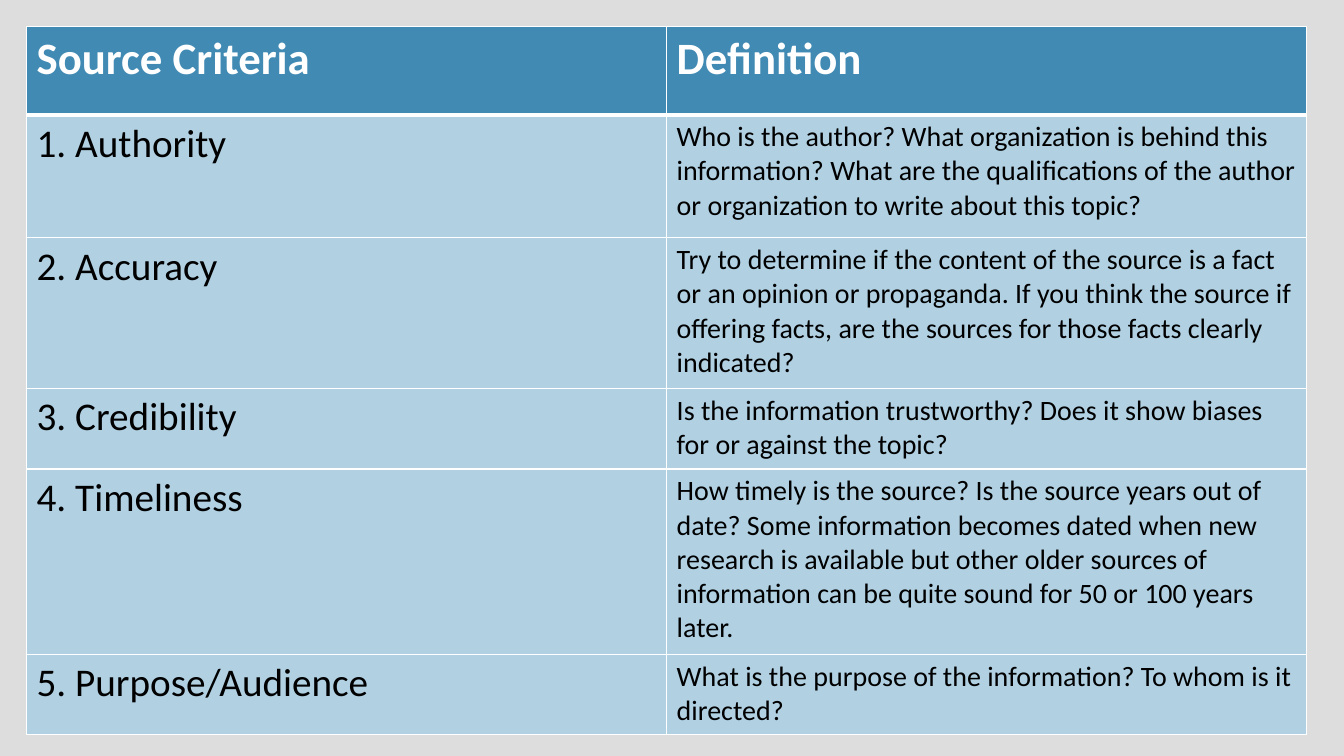
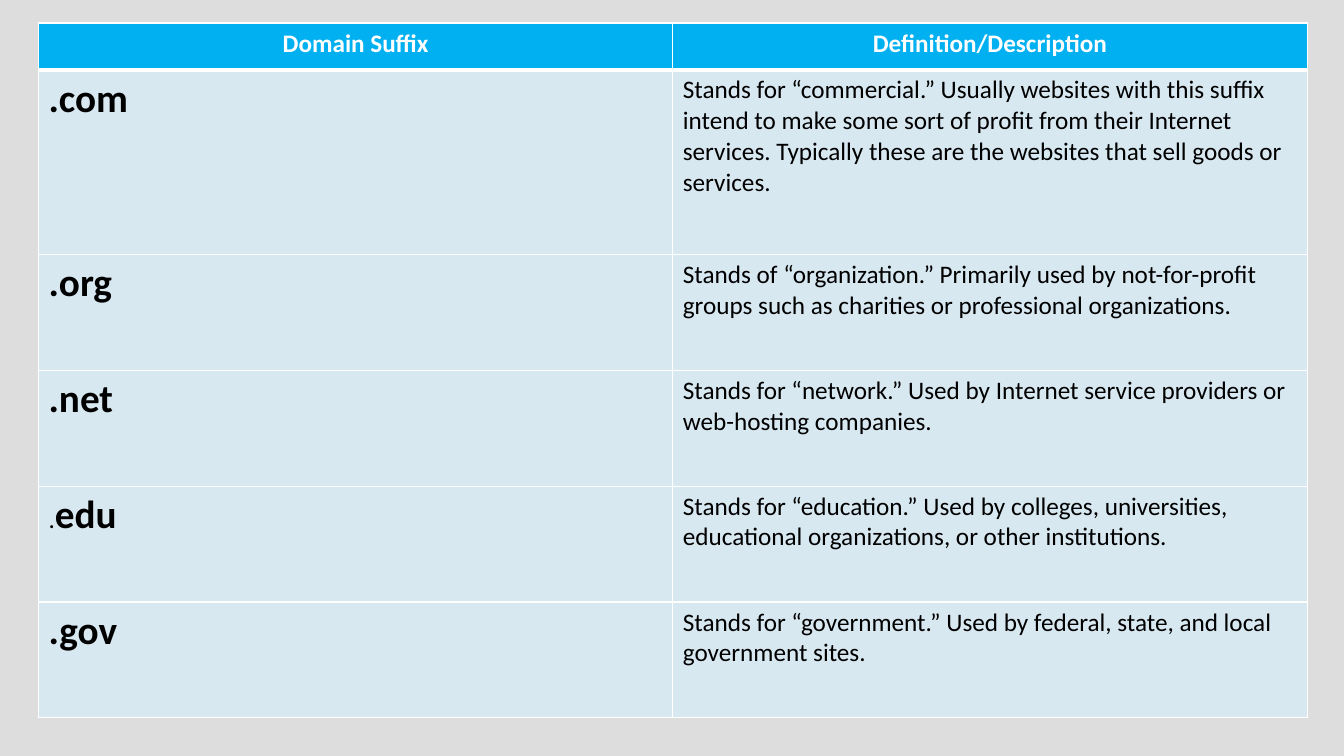
from lxml.etree import SubElement
from pptx import Presentation
from pptx.dml.color import RGBColor
from pptx.enum.text import PP_ALIGN
from pptx.oxml.ns import qn
from pptx.util import Cm, Pt

FONT = "Calibri"
WHITE = "FFFFFF"
BLACK = "000000"
GREY = "DDDDDD"
THIN = 1
THICK = 3

CRITERIA = [
    ("1. Authority",
     "Who is the author? What organization is behind this information? "
     "What are the qualifications of the author or organization to write "
     "about this topic?"),
    ("2. Accuracy",
     "Try to determine if the content of the source is a fact or an opinion "
     "or propaganda. If you think the source if offering facts, are the "
     "sources for those facts clearly indicated?"),
    ("3. Credibility",
     "Is the information trustworthy? Does it show biases for or against "
     "the topic?"),
    ("4. Timeliness",
     "How timely is the source? Is the source years out of date? Some "
     "information becomes dated when new research is available but other "
     "older sources of information can be quite sound for 50 or 100 years "
     "later."),
    ("5. Purpose/Audience",
     "What is the purpose of the information? To whom is it directed?"),
]

DOMAINS = [
    (".com",
     "Stands for “commercial.” Usually websites with this suffix intend to "
     "make some sort of profit from their Internet services. Typically these "
     "are the websites that sell goods or services."),
    (".org",
     "Stands of “organization.” Primarily used by not-for-profit groups such "
     "as charities or professional organizations."),
    (".net",
     "Stands for “network.” Used by Internet service providers or "
     "web-hosting companies."),
    (".edu",
     "Stands for “education.” Used by colleges, universities, educational "
     "organizations, or other institutions."),
    (".gov",
     "Stands for “government.” Used by federal, state, and local government "
     "sites."),
]


def paint(fill, tone):
    fill.solid()
    fill.fore_color.rgb = RGBColor.from_string(tone)


def write(cell, text, size=18, bold=False, tone=BLACK, align=PP_ALIGN.LEFT):
    para = cell.text_frame.paragraphs[0]
    para.alignment = align
    run = para.add_run()
    run.text = text
    font = run.font
    font.name = FONT
    font.size = Pt(size)
    font.bold = bold
    font.color.rgb = RGBColor.from_string(tone)


def frame(cell, top=THIN, bottom=THIN):
    props = cell._tc.get_or_add_tcPr()
    sides = [("lnL", THIN), ("lnR", THIN), ("lnT", top), ("lnB", bottom)]
    for spot, (side, width) in enumerate(sides):
        line = SubElement(props, qn(f"a:{side}"), w=str(Pt(width)))
        fill = SubElement(line, qn("a:solidFill"))
        SubElement(fill, qn("a:srgbClr"), val=WHITE)
        props.insert(spot, line)


def add_grid(deck, left, top, width, heights, head, body):
    slide = deck.slides.add_slide(deck.slide_layouts[6])
    shape = slide.shapes.add_table(
        len(heights), 2, Cm(left), Cm(top), Cm(width), Cm(sum(heights)))
    table = shape.table
    table.horz_banding = False
    for column in table.columns:
        column.width = Cm(width / 2)
    for index, height in enumerate(heights):
        row = table.rows[index]
        row.height = Cm(height)
        for cell in row.cells:
            paint(cell.fill, body if index else head)
            frame(cell, top=THICK if index == 1 else THIN,
                  bottom=THIN if index else THICK)
    return table


def add_heads(table, labels, **style):
    for cell, label in zip(table.rows[0].cells, labels):
        write(cell, label, bold=True, tone=WHITE, **style)


def add_criteria(deck):
    heights = [2.22, 3.1, 3.8, 2.03, 4.67, 2.03]
    table = add_grid(deck, 0.67, 0.67, 32.26, heights, "418AB3", "B1D1E3")
    add_heads(table, ("Source Criteria", "Definition"), size=32)
    for index, (name, meaning) in enumerate(CRITERIA, 1):
        write(table.cell(index, 0), name, size=28)
        write(table.cell(index, 1), meaning, size=20)


def add_domains(deck):
    heights = [1.18, 4.65] + [2.92] * 4
    table = add_grid(deck, 0.97, 0.58, 31.97, heights, "00B0F0", "D8E8F1")
    add_heads(table, ("Domain Suffix", "Definition/Description"),
              align=PP_ALIGN.CENTER)
    for index, (name, meaning) in enumerate(DOMAINS, 1):
        cell = table.cell(index, 0)
        if name == ".edu":
            write(cell, ".")
            name = "edu"
        write(cell, name, size=28, bold=True)
        write(table.cell(index, 1), meaning)


def main():
    deck = Presentation()
    deck.slide_width = Cm(33.87)
    deck.slide_height = Cm(19.05)
    paint(deck.slide_master.background.fill, GREY)
    add_criteria(deck)
    add_domains(deck)
    deck.save("out.pptx")


if __name__ == "__main__":
    main()
